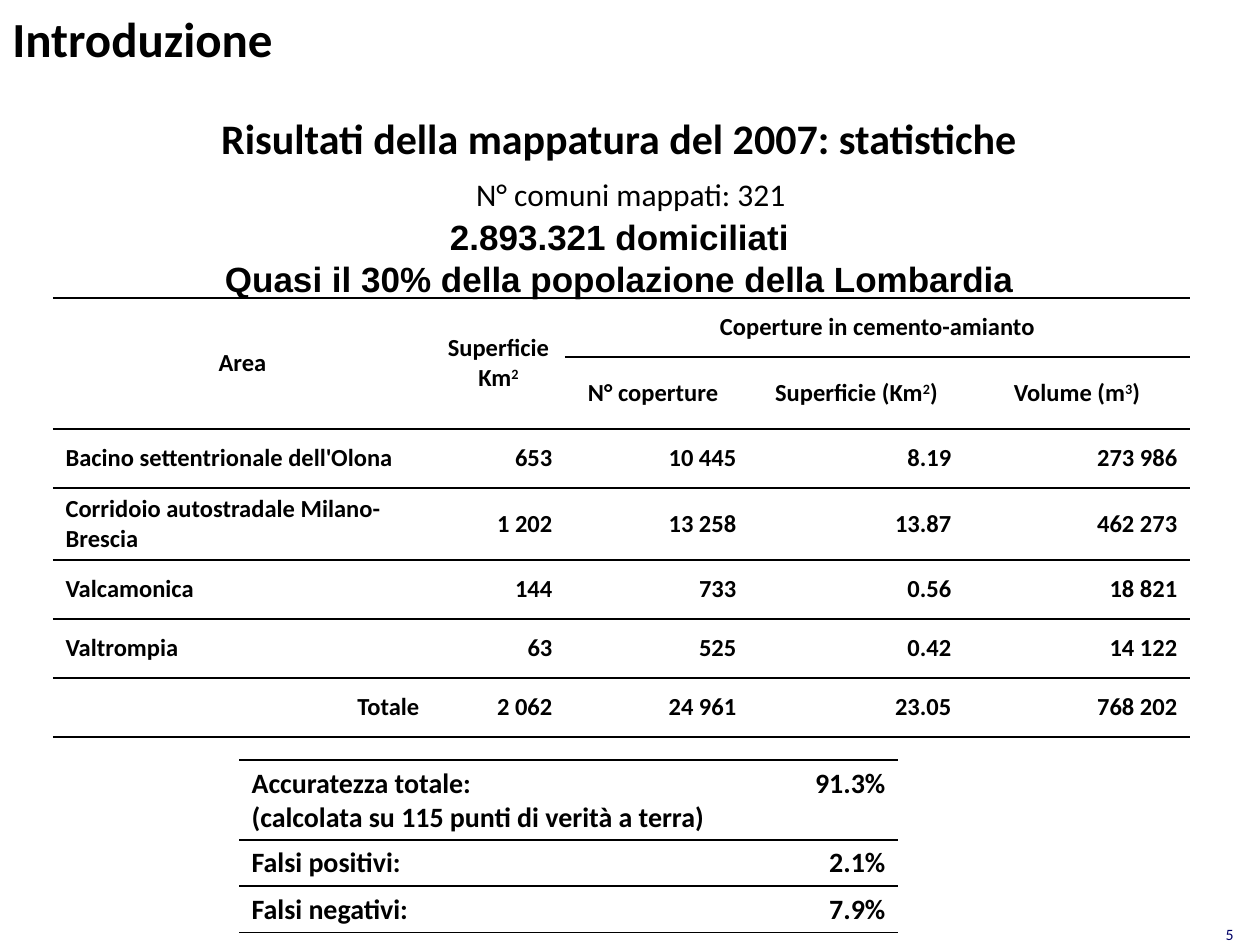
"""Build the slide with the 2007 mapping statistics."""
from lxml import etree
from pptx import Presentation
from pptx import util as u
from pptx.dml.color import RGBColor
from pptx.enum import text
from pptx.oxml.ns import qn

BLACK = RGBColor(0, 0, 0)
NAVY = RGBColor(0, 0, 0x66)
LEFT, CENTER, RIGHT = text.PP_ALIGN.LEFT, text.PP_ALIGN.CENTER, text.PP_ALIGN.RIGHT
TOP, MIDDLE = text.MSO_ANCHOR.TOP, text.MSO_ANCHOR.MIDDLE
CALIBRI, ARIAL = "Calibri", "Arial"
TRAILING_MARGIN = 20
HEADER_MARGIN = 23

# fields: lines, place in px, alignment, anchor, font
BOXES = [
    (["5"], (1135, 919, 111, 26), RIGHT, TOP, dict(size=9, name=CALIBRI, color=NAVY)),
    (["Introduzione"], (0, -1, 1037, 77), LEFT, MIDDLE, dict(size=28, bold=True)),
    (["Risultati della mappatura del 2007: statistiche"], (44, 106, 1150, 63),
     CENTER, TOP, dict(size=24, bold=True)),
    (["N° comuni mappati: 321"], (127, 169, 1008, 44), CENTER, TOP, dict(size=18)),
    (["2.893.321 domiciliati", "Quasi il 30% della popolazione della Lombardia"],
     (35, 209, 1189, 97), CENTER, TOP, dict(size=20, bold=True, name=ARIAL)),
]

AREAS = [
    ["Area", "Superficie\nKm^2", "Coperture in cemento-amianto", "", ""],
    ["", "", "N° coperture", "Superficie (Km^2^)", "Volume (m^3^)"],
    ["Bacino settentrionale dell'Olona", "653", "10 445", "8.19", "273 986"],
    ["Corridoio autostradale Milano-Brescia", "1 202", "13 258", "13.87", "462 273"],
    ["Valcamonica", "144", "733", "0.56", "18 821"],
    ["Valtrompia", "63", "525", "0.42", "14 122"],
    ["Totale", "2 062", "24 961", "23.05", "768 202"],
]
AREA_COLUMNS = [379, 133, 184, 215, 226]
AREA_ROWS = [59, 72, 59, 72, 59, 59, 59]
AREA_MERGES = [((0, 0), (1, 0)), ((0, 1), (1, 1)), ((0, 2), (0, 4))]

ACCURACY = [
    ["Accuratezza totale:\n(calcolata su 115 punti di verità a terra)", "91.3%"],
    ["Falsi positivi:", "2.1%"],
    ["Falsi negativi:", "7.9%"],
]
ACCURACY_COLUMNS = [509, 150]
ACCURACY_ROWS = [79, 46, 46]


def px(length):
    return u.Emu(round(length * 914400 / 126))


def write(frame, lines, align, size, name=CALIBRI, bold=False, color=BLACK):
    """Fill a frame; text between carets is superscript."""
    for index, line in enumerate(lines):
        para = frame.paragraphs[0] if index == 0 else frame.add_paragraph()
        para.alignment = align
        for part, words in enumerate(line.split("^")):
            if not words:
                continue
            span = para.add_run()
            span.text = words
            for key, value in dict(size=u.Pt(size), name=name, bold=bold).items():
                setattr(span.font, key, value)
            span.font.color.rgb = color
            if part % 2:
                span.font._element.set("baseline", "30000")


def set_borders(cell, with_top):
    """Rule the cell above and below, and leave its sides open."""
    properties = cell._tc.get_or_add_tcPr()
    drawn = {"a:lnL": False, "a:lnR": False, "a:lnT": with_top, "a:lnB": True}
    for index, (side, visible) in enumerate(drawn.items()):
        line = etree.Element(qn(side), w=str(u.Pt(1)))
        properties.insert(index, line)
        fill = etree.SubElement(line, qn("a:solidFill" if visible else "a:noFill"))
        if visible:
            etree.SubElement(fill, qn("a:srgbClr"), val=str(BLACK))


def add_grid(page, content, left, top, columns, rows, size, anchor, align, merges=()):
    table = page.shapes.add_table(len(rows), len(columns), px(left), px(top),
                                  px(sum(columns)), px(sum(rows))).table
    table.first_row = table.horz_banding = False
    for column, width in zip(table.columns, columns):
        column.width = px(width)
    for row, height in zip(table.rows, rows):
        row.height = px(height)
    for first, last in merges:
        table.cell(*first).merge(table.cell(*last))
    for r, row in enumerate(content):
        for c, words in enumerate(row):
            cell = table.cell(r, c)
            cell.fill.background()
            cell.vertical_anchor = anchor
            set_borders(cell, with_top=r == 0 or not cell.is_spanned)
            if words:
                write(cell.text_frame, words.split("\n"), align(r, c), size, bold=True)
    return table


def align_area(row, column):
    if row < 2:
        return LEFT if (row, column) == (1, 2) else CENTER
    return RIGHT if column or row == len(AREAS) - 1 else LEFT


def align_accuracy(row, column):
    return RIGHT if column else LEFT


def main():
    deck = Presentation()
    deck.slide_width, deck.slide_height = px(1260), px(945)
    page = deck.slides.add_slide(deck.slide_layouts[6])

    for lines, place, align, anchor, font in BOXES:
        frame = page.shapes.add_textbox(*map(px, place)).text_frame
        frame.word_wrap = True
        frame.vertical_anchor = anchor
        write(frame, lines, align, **font)
    residents = frame.paragraphs[0]
    residents._p.get_or_add_pPr().set("marR", str(px(TRAILING_MARGIN)))

    areas = add_grid(page, AREAS, 53, 298, AREA_COLUMNS, AREA_ROWS, 14, MIDDLE,
                     align_area, AREA_MERGES)
    areas.cell(1, 2).margin_left = px(HEADER_MARGIN)
    add_grid(page, ACCURACY, 239, 760, ACCURACY_COLUMNS, ACCURACY_ROWS, 16, TOP,
             align_accuracy)
    deck.save("out.pptx")


if __name__ == "__main__":
    main()
